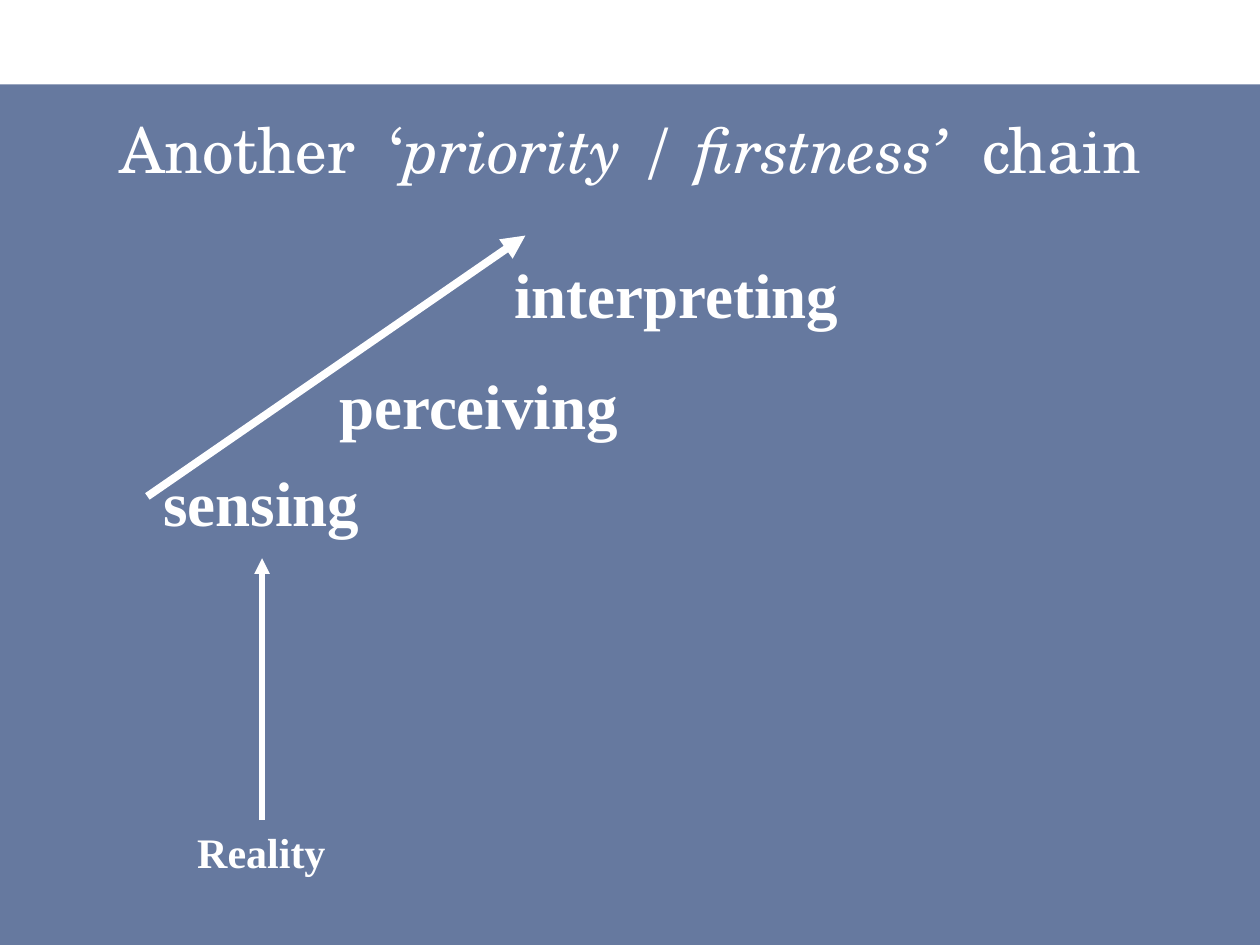
from lxml.etree import SubElement
from pptx import Presentation
from pptx.dml.color import RGBColor
from pptx.enum.shapes import MSO_CONNECTOR, MSO_SHAPE
from pptx.enum.text import MSO_ANCHOR, MSO_AUTO_SIZE, PP_ALIGN
from pptx.oxml.ns import qn
from pptx.util import Inches, Pt

WHITE = RGBColor(0xFF, 0xFF, 0xFF)
NAVY = RGBColor(0x00, 0x20, 0x60)
SLIDE_WIDTH, SLIDE_HEIGHT = 10, 7.5
BAND_TOP = 0.67
BAND_OPACITY = 60

TITLE_BOX = (0.25, 0.83, 9.5, 0.7)
TITLE_FORMAT = {"name": "TeX Gyre Schola", "size": Pt(36), "bold": False}
TITLE_RUNS = [("Another  ‘", False), ("priority / firstness’ ", True), (" chain", False)]

# text, size in points, (left, top, width, height)
LABELS = [
    ("sensing", 36, (1.19, 3.63, 1.77, 0.71)),
    ("perceiving", 36, (2.58, 2.86, 2.44, 0.71)),
    ("interpreting", 36, (3.97, 1.98, 2.8, 0.71)),
    ("Reality", 24, (1.46, 6.51, 1.23, 0.51)),
]
# start, tip, width in points
ARROWS = [
    ((1.17, 3.94), (4.17, 1.87), 4.5),
    ((2.08, 6.51), (2.08, 4.43), 3),
]


def inches(values):
    return [Inches(value) for value in values]


def format_font(font, settings):
    for name, value in settings.items():
        setattr(font, name, value)
    font.color.rgb = WHITE


def add_band(slide):
    """Add the translucent band behind the title."""
    box = inches((0, BAND_TOP, SLIDE_WIDTH, SLIDE_HEIGHT - BAND_TOP))
    band = slide.shapes.add_shape(MSO_SHAPE.RECTANGLE, *box)
    band.shadow.inherit = False
    band.line.fill.background()
    band.fill.solid()
    band.fill.fore_color.rgb = NAVY
    color = band.element.spPr.find(qn("a:solidFill")).find(qn("a:srgbClr"))
    SubElement(color, qn("a:alpha"), val=str(BAND_OPACITY * 1000))
    slide.shapes.title.element.addprevious(band.element)


def fill_title(title):
    title.left, title.top, title.width, title.height = inches(TITLE_BOX)
    frame = title.text_frame
    frame.vertical_anchor = MSO_ANCHOR.MIDDLE
    frame.auto_size = MSO_AUTO_SIZE.NONE
    paragraph = frame.paragraphs[0]
    paragraph.alignment = PP_ALIGN.CENTER
    for text, italic in TITLE_RUNS:
        run = paragraph.add_run()
        run.text = text
        format_font(run.font, {**TITLE_FORMAT, "italic": italic})


def add_label(shapes, text, size, box):
    frame = shapes.add_textbox(*inches(box)).text_frame
    frame.word_wrap = False
    frame.auto_size = MSO_AUTO_SIZE.SHAPE_TO_FIT_TEXT
    paragraph = frame.paragraphs[0]
    paragraph.alignment = PP_ALIGN.CENTER
    run = paragraph.add_run()
    run.text = text
    format_font(run.font, {"name": "Times New Roman", "size": Pt(size), "bold": True})


def add_arrow(shapes, start, tip, width):
    arrow = shapes.add_connector(MSO_CONNECTOR.STRAIGHT, *inches(start + tip))
    arrow.line.color.rgb = WHITE
    arrow.line.width = Pt(width)
    SubElement(arrow.line._get_or_add_ln(), qn("a:tailEnd"), type="triangle")
    SubElement(arrow.element.spPr, qn("a:effectLst"))


def main():
    presentation = Presentation()
    presentation.slide_width = Inches(SLIDE_WIDTH)
    presentation.slide_height = Inches(SLIDE_HEIGHT)
    slide = presentation.slides.add_slide(presentation.slide_layouts[5])
    add_band(slide)
    fill_title(slide.shapes.title)
    chain = slide.shapes.add_group_shape()
    for label in LABELS:
        add_label(chain.shapes, *label)
    for arrow in ARROWS:
        add_arrow(chain.shapes, *arrow)
    presentation.save("out.pptx")


if __name__ == "__main__":
    main()
